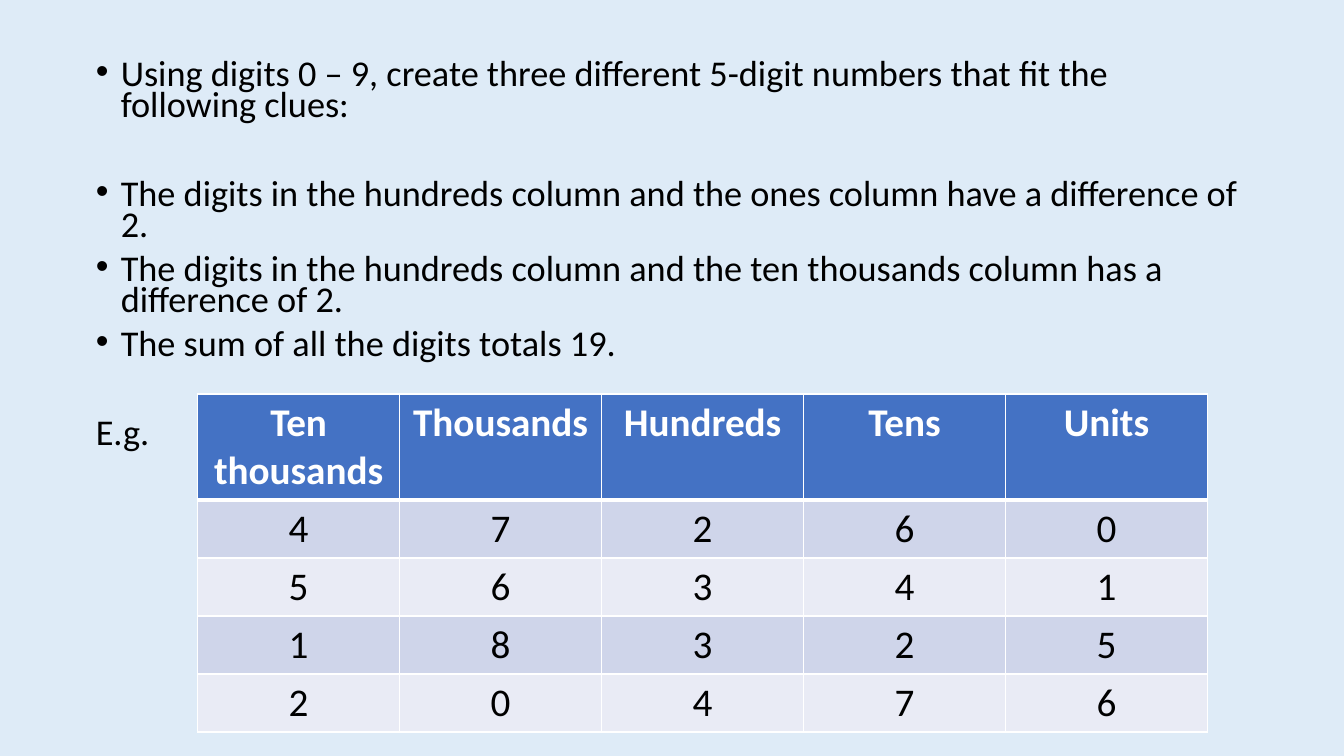
from pptx import Presentation
from pptx.dml.color import RGBColor
from pptx.enum.text import MSO_ANCHOR, MSO_AUTO_SIZE, PP_ALIGN
from pptx.oxml.ns import qn
from pptx.util import Cm, Pt
from lxml.etree import SubElement

CLUES = [
    {"text": "Using digits 0 – 9, create three different 5-digit numbers that fit the following clues:"},
    {"text": "The digits in the hundreds column and the ones column have a difference of 2.", "gap": True},
    {"text": "The digits in the hundreds column and the ten thousands column has a difference of 2."},
    {"text": "The sum of all the digits totals 19."},
    {"text": "E.g.", "gap": True, "bullet": False},
]
PLACES = ["Ten thousands", "Thousands", "Hundreds", "Tens", "Units"]
NUMBERS = ["47260", "56341", "18325", "20476"]

THEME = {
    "font": "Calibri", "clue_size": 25.9, "cell_size": 28,
    "back": "DEEBF7", "text": "000000", "white": "FFFFFF",
    "header": "4472C4", "bands": ["CFD5EA", "E9EBF5"],
    "rule": 1, "header_rule": 3,
}
SPACE, WIDE_SPACE, LINE = 10, 42, 0.7
BODY = {"left": Cm(2.16), "top": Cm(1.45), "width": Cm(29.57), "height": Cm(10.57)}
TABLE_LEFT, TABLE_TOP, COL_W = Cm(4.98), Cm(9.93), Cm(5.09)
HEADER_H, ROW_H = Cm(2.65), Cm(1.46)


def apply(obj, values):
    for name, value in values.items():
        setattr(obj, name, value)


def style_font(font, size, color, bold=False):
    apply(font, {"name": THEME["font"], "size": Pt(size), "bold": bold})
    font.color.rgb = RGBColor.from_string(color)


def set_bullet(p, shown):
    pPr = p._p.get_or_add_pPr()
    indent = Cm(0.63) if shown else 0
    pPr.set("marL", str(indent))
    pPr.set("indent", str(-indent))
    if shown:
        SubElement(pPr, qn("a:buFont"), typeface="Arial")
        SubElement(pPr, qn("a:buChar"), char="•")
    else:
        SubElement(pPr, qn("a:buNone"))


def set_borders(cell, widths):
    tcPr = cell._tc.get_or_add_tcPr()
    for side, width in widths.items():
        ln = SubElement(tcPr, qn(f"a:ln{side}"), w=str(Pt(width)))
        fill = SubElement(ln, qn("a:solidFill"))
        SubElement(fill, qn("a:srgbClr"), val=THEME["white"])


def add_clues(s):
    body = s.placeholders[1]
    apply(body, BODY)
    tf = body.text_frame
    apply(tf, {"word_wrap": True, "auto_size": MSO_AUTO_SIZE.NONE,
               "vertical_anchor": MSO_ANCHOR.TOP})
    for i, clue in enumerate(CLUES):
        p = tf.add_paragraph() if i else tf.paragraphs[0]
        space = WIDE_SPACE if clue.get("gap") else SPACE
        apply(p, {"line_spacing": LINE, "space_before": Pt(space),
                  "space_after": Pt(0), "alignment": PP_ALIGN.LEFT})
        set_bullet(p, clue.get("bullet", True))
        r = p.add_run()
        r.text = clue["text"]
        style_font(r.font, THEME["clue_size"], THEME["text"])


def add_numbers(s):
    rows = [PLACES] + [list(n) for n in NUMBERS]
    heights = [HEADER_H] + [ROW_H] * len(NUMBERS)
    table = s.shapes.add_table(len(rows), len(PLACES), TABLE_LEFT, TABLE_TOP,
                               COL_W * len(PLACES), sum(heights)).table
    for col in table.columns:
        col.width = COL_W
    for i, (row, height) in enumerate(zip(rows, heights)):
        table.rows[i].height = height
        header = i == 0
        fill = THEME["header"] if header else THEME["bands"][(i - 1) % 2]
        color = THEME["white"] if header else THEME["text"]
        widths = dict.fromkeys("LRTB", THEME["rule"])
        if i < 2:
            widths["B" if header else "T"] = THEME["header_rule"]
        for j, text in enumerate(row):
            cell = table.cell(i, j)
            set_borders(cell, widths)
            cell.fill.solid()
            cell.fill.fore_color.rgb = RGBColor.from_string(fill)
            p = cell.text_frame.paragraphs[0]
            p.alignment = PP_ALIGN.CENTER
            r = p.add_run()
            r.text = text
            style_font(r.font, THEME["cell_size"], color, header)


def main():
    prs = Presentation()
    apply(prs, {"slide_width": Cm(33.87), "slide_height": Cm(19.05)})
    s = prs.slides.add_slide(prs.slide_layouts[1])
    s.background.fill.solid()
    s.background.fill.fore_color.rgb = RGBColor.from_string(THEME["back"])
    title = s.shapes.title.element
    title.getparent().remove(title)
    add_clues(s)
    add_numbers(s)
    prs.save("out.pptx")


if __name__ == "__main__":
    main()
